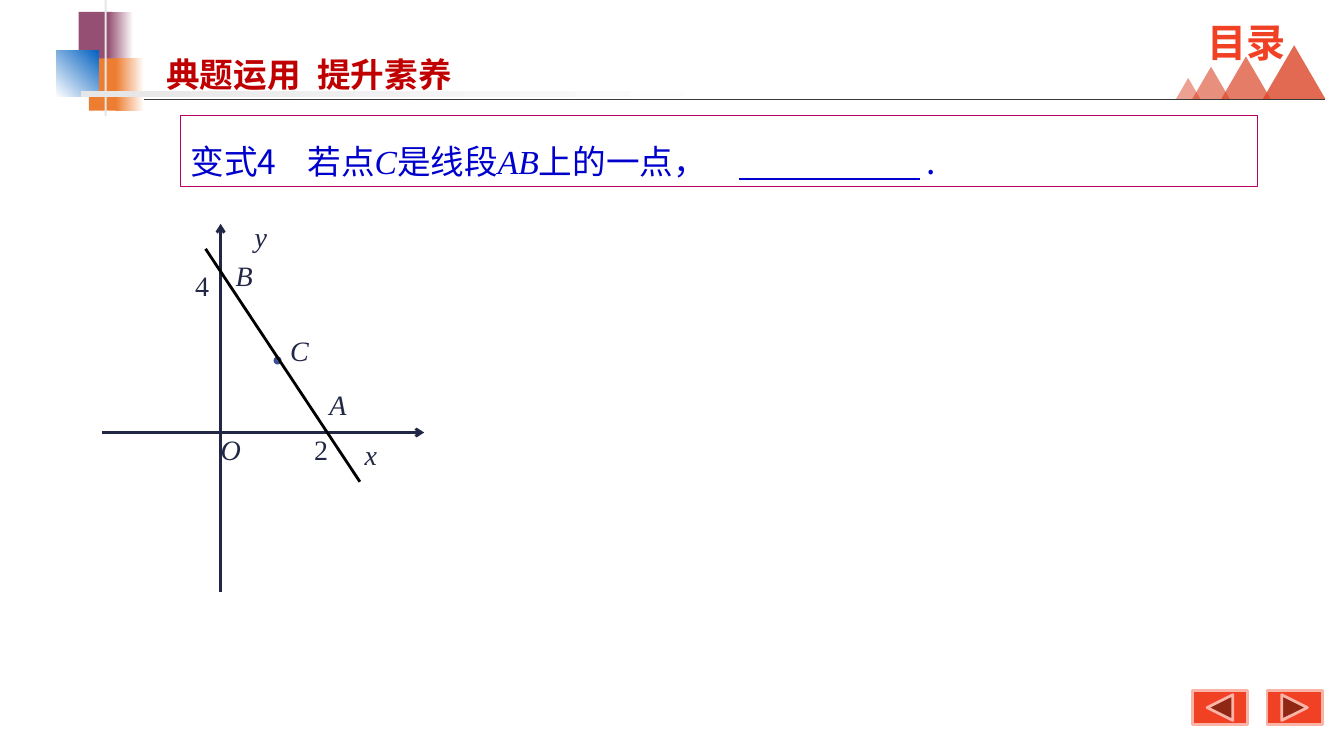
from lxml import etree
from pptx import Presentation
from pptx.dml.color import RGBColor
from pptx.enum.shapes import MSO_CONNECTOR, MSO_SHAPE
from pptx.enum.text import MSO_ANCHOR, PP_ALIGN
from pptx.oxml.ns import qn
from pptx.util import Cm, Pt

RECT, OVAL, TRIANGLE = MSO_SHAPE.RECTANGLE, MSO_SHAPE.OVAL, MSO_SHAPE.ISOSCELES_TRIANGLE
BACK = MSO_SHAPE.ACTION_BUTTON_BACK_OR_PREVIOUS
NEXT = MSO_SHAPE.ACTION_BUTTON_FORWARD_OR_NEXT
STRAIGHT = MSO_CONNECTOR.STRAIGHT
CENTER, LEFT = PP_ALIGN.CENTER, PP_ALIGN.LEFT
TOP, MIDDLE = MSO_ANCHOR.TOP, MSO_ANCHOR.MIDDLE
SERIF, SANS, CJK = "Times New Roman", "Arial", "Noto Sans CJK SC"

COLORS = {
    "rule": "393A3B", "hill": "DB4527", "button": "F14124", "button_edge": "F9B3A7",
    "purple": "954F72", "orange": "ED7D31", "blue": "0563C1", "gray": "E7E6E6",
    "white": "FFFFFF", "title": "C00000", "frame": "BA0066", "question": "0000CC",
    "ink": "212745", "point": "4E67C8", "point_edge": "3A4C94", "black": "000000",
}


def rgb(name):
    return RGBColor.from_string(COLORS[name])


def add_shape(shapes, kind, x, y, w, h, fill=None, fade=None, angle=0, line=None, width=2):
    """Add a preset shape; fade is the second colour of a gradient."""
    sp = shapes.add_shape(kind, Cm(x), Cm(y), Cm(w), Cm(h))
    sp.shadow.inherit = False
    if fade:
        sp.fill.gradient()
        sp.fill.gradient_angle = angle
        for stop, name in zip(sp.fill.gradient_stops, (fill, fade)):
            stop.color.rgb = rgb(name)
    elif fill:
        sp.fill.solid()
        sp.fill.fore_color.rgb = rgb(fill)
    else:
        sp.fill.background()
    if line:
        sp.line.color.rgb = rgb(line)
        sp.line.width = Pt(width)
    else:
        sp.line.fill.background()
    return sp


def add_line(shapes, x1, y1, x2, y2, color, width=2, arrow=False):
    cxn = shapes.add_connector(STRAIGHT, Cm(x1), Cm(y1), Cm(x2), Cm(y2))
    cxn.line.color.rgb = rgb(color)
    cxn.line.width = Pt(width)
    if arrow:
        etree.SubElement(cxn.line._get_or_add_ln(), qn("a:tailEnd"), type="arrow")
    etree.SubElement(cxn._element.spPr, qn("a:effectLst"))


def add_tabs(p, *stops):
    tab_list = etree.SubElement(p._p.get_or_add_pPr(), qn("a:tabLst"))
    for stop in stops:
        etree.SubElement(tab_list, qn("a:tab"), pos=str(Cm(stop)), algn="l")


def style_run(r, size, font, color, bold=False, italic=False):
    r.font.size, r.font.name = Pt(size), font
    r.font.bold, r.font.italic = bold, italic
    r.font.color.rgb = rgb(color)
    etree.SubElement(r._r.get_or_add_rPr(), qn("a:ea"), typeface=CJK)


def add_text(shapes, x, y, w, h, text, size, font, color, bold=False, italic=False,
             align=LEFT, spacing=1.0, tabs=()):
    tf = shapes.add_textbox(Cm(x), Cm(y), Cm(w), Cm(h)).text_frame
    tf.word_wrap = False
    p = tf.paragraphs[0]
    p.alignment, p.line_spacing = align, spacing
    if tabs:
        add_tabs(p, *tabs)
    p.text = text
    for r in p.runs:
        style_run(r, size, font, color, bold, italic)


def add_hills(shapes, right, base):
    """Draw the contents label and the fading hills that stand on the rule."""
    add_line(shapes, 3.15, base, right, base, "rule", 0.25)
    for offset, w, alpha in ((1.57, 1.57, 80), (2.62, 1.24, 70), (3.35, 0.94, 60), (3.76, 0.61, 50)):
        h = 0.86 * w
        sp = add_shape(shapes, TRIANGLE, right - offset, base - h, w, h, "hill")
        color = sp._element.spPr.find(qn("a:solidFill"))[0]
        etree.SubElement(color, qn("a:alpha"), val=str(alpha * 1000))
    add_text(shapes, right - 3.22, base - 2.16, 2.49, 1.45, "目录", 28, SERIF, "button",
             bold=True, align=CENTER)


def add_buttons(shapes, x, y):
    for i, kind in enumerate((BACK, NEXT)):
        add_shape(shapes, kind, x + i * 1.88, y, 1.39, 0.86, "button", line="button_edge")


def add_ornament(shapes, x, y):
    group = shapes.add_group_shape().shapes
    for dx, dy, w, h, fill, fade, angle in (
        (0.56, 0.3, 0.84, 1.32, "purple", None, 0),
        (1.3, 0.3, 0.64, 1.32, "purple", "white", 0),
        (0.82, 1.47, 0.81, 1.32, "orange", None, 0),
        (1.5, 1.47, 0.71, 1.32, "orange", "white", 0),
        (0, 1.27, 1.07, 1.17, "white", "blue", 45),
        (1.22, 0, 0.05, 2.92, "gray", None, 0),
        (0.61, 2.29, 16.61, 0.15, "gray", "white", 0),
    ):
        add_shape(group, RECT, x + dx, y + dy, w, h, fill, fade, angle)


def add_question(shapes, x, y, w, h):
    sp = add_shape(shapes, RECT, x, y, w, h, line="frame", width=0.75)
    tf = sp.text_frame
    tf.word_wrap, tf.vertical_anchor = True, MIDDLE
    p = tf.paragraphs[0]
    p.alignment, p.line_spacing = LEFT, 1.5
    add_tabs(p, 2.95, 18.54)
    for text, italic in (("变式4\t若点", False), ("C", True), ("是线段", False),
                         ("AB", True), ("上的一点，\t.", False)):
        r = p.add_run()
        r.text = text
        style_run(r, 24, SERIF if italic else CJK, "question", italic=italic)
    add_line(shapes, x + 14.07, y + 1.61, x + 18.64, y + 1.61, "question", 1.5)


def add_graph(shapes, x, y, w, h):
    """Draw the axes, line AB with point C, and their labels."""
    group = shapes.add_group_shape().shapes
    origin_x, origin_y = x + 2.99, y + 5.26
    add_shape(group, OVAL, x + 4.36, y + 3.38, 0.13, 0.13, "point", line="point_edge")
    add_line(group, x, origin_y, x + w, origin_y, "ink", arrow=True)
    add_line(group, origin_x, y + h, origin_x, y, "ink", arrow=True)
    add_line(group, x + 2.61, y + 0.63, x + 6.5, y + 6.5, "black")
    for text, dx, dy in (("y", 3.6, -0.23), ("C", 4.49, 2.64), ("x", 6.37, 5.26),
                         ("O", 2.74, 5.13), ("B", 3.12, 0.76), ("A", 5.48, 4.01),
                         ("2", 5.1, 5.13), ("4", 2.1, 1.01)):
        add_text(group, x + dx, y + dy, 1.12, 1.12, text, 20, SERIF, "ink",
                 italic=text.isalpha())


def main():
    prs = Presentation()
    prs.slide_width, prs.slide_height = Cm(33.87), Cm(19.05)
    shapes = prs.slides.add_slide(prs.slide_layouts[6]).shapes
    add_hills(shapes, 33.4, 2.49)
    add_buttons(shapes, 30.05, 17.4)
    add_ornament(shapes, 1.42, 0)
    add_text(shapes, 3.94, 1.02, 7.82, 1.37, "典题运用\t提升素养", 24, SANS, "title",
             bold=True, spacing=1.2, tabs=(3.81,))
    add_question(shapes, 4.55, 2.9, 27.13, 1.8)
    add_graph(shapes, 2.57, 5.64, 8.12, 9.27)
    prs.save("out.pptx")


if __name__ == "__main__":
    main()
